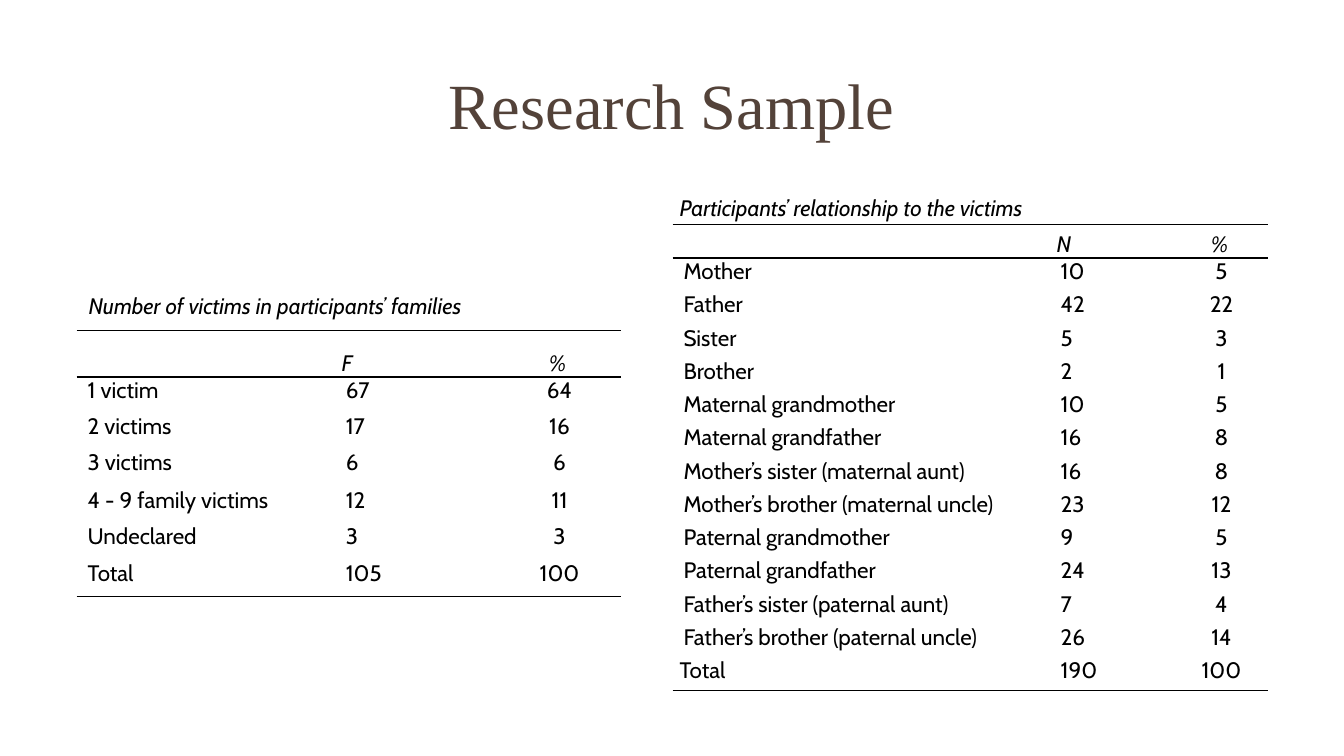
from lxml import etree
from pptx import Presentation
from pptx.dml.color import RGBColor
from pptx.enum.text import MSO_ANCHOR, PP_ALIGN
from pptx.oxml.ns import qn
from pptx.util import Inches, Pt

TITLE = "Research Sample"
RELATIONSHIP = {
    "pos": (6.67, 1.9),
    "cols": [3.74, 1.2, 0.97],
    "heights": [0.33] * 15,
    "caption": "Participants’ relationship to the victims",
    "caption_indent": 0,
    "total_indent": 0,
    "rows": [
        ("", "N", "%"),
        ("Mother", "10", "5"),
        ("Father", "42", "22"),
        ("Sister", "5", "3"),
        ("Brother", "2", "1"),
        ("Maternal grandmother", "10", "5"),
        ("Maternal grandfather", "16", "8"),
        ("Mother’s sister (maternal aunt)", "16", "8"),
        ("Mother’s brother (maternal uncle)", "23", "12"),
        ("Paternal grandmother", "9", "5"),
        ("Paternal grandfather", "24", "13"),
        ("Father’s sister (paternal aunt)", "7", "4"),
        ("Father’s brother (paternal uncle)", "26", "14"),
        ("Total", "190", "100"),
    ],
}
FAMILIES = {
    "pos": (0.76, 2.81),
    "cols": [2.56, 1.58, 1.26],
    "heights": [0.47, 0.46, 0.36, 0.36, 0.37, 0.36, 0.37, 0.36],
    "caption": "Number of victims in participants’ families",
    "caption_indent": 0.05,
    "total_indent": 0.04,
    "rows": [
        ("", "F", "%"),
        ("1 victim", "67", "64"),
        ("2 victims", "17", "16"),
        ("3 victims", "6", "6"),
        ("4 - 9 family victims", "12", "11"),
        ("Undeclared", "3", "3"),
        ("Total", "105", "100"),
    ],
}

WHITE = RGBColor(255, 255, 255)
BLACK = RGBColor(0, 0, 0)
BROWN = RGBColor(0x53, 0x42, 0x39)
LEFT, CENTER = PP_ALIGN.LEFT, PP_ALIGN.CENTER
TOP, MIDDLE, BOTTOM = MSO_ANCHOR.TOP, MSO_ANCHOR.MIDDLE, MSO_ANCHOR.BOTTOM
NO_STYLE = "{2D5ABB26-0587-4C30-8999-92F81FD0307C}"
INDENT = 0.04


def set_text(tf, text, font="Cabin", size=16, color=BLACK, italic=False,
             align=LEFT, indent=0):
    p = tf.paragraphs[0]
    p.alignment = align
    if indent:
        p._p.get_or_add_pPr().set("marL", str(Inches(indent)))
    if text:
        f = p.add_run().font
    else:
        f = p.font
    f.name, f.size, f.italic = font, Pt(size), italic
    f.color.rgb = color
    if text:
        p.runs[0].text = text


def set_borders(cell, top, bottom):
    tcPr = cell._tc.get_or_add_tcPr()
    sides = (("a:lnL", False), ("a:lnR", False), ("a:lnT", top), ("a:lnB", bottom))
    for i, (tag, visible) in enumerate(sides):
        ln = etree.Element(qn(tag), w=str(Pt(1)))
        if visible:
            fill = etree.SubElement(ln, qn("a:solidFill"))
            etree.SubElement(fill, qn("a:srgbClr"), val=str(BLACK))
        else:
            etree.SubElement(ln, qn("a:noFill"))
        tcPr.insert(i, ln)


def add_sample_table(slide, data):
    rows = [(data["caption"], "", "")] + data["rows"]
    cols, heights = data["cols"], data["heights"]
    x, y = data["pos"]
    frame = slide.shapes.add_table(len(rows), len(cols), Inches(x), Inches(y),
                                   Inches(sum(cols)), Inches(sum(heights)))
    table = frame.table
    table.first_row = table.horz_banding = False
    table._tbl.tblPr.find(qn("a:tableStyleId")).text = NO_STYLE
    for col, width in zip(table.columns, cols):
        col.width = Inches(width)
    for row, height in zip(table.rows, heights):
        row.height = Inches(height)
    table.cell(0, 0).merge(table.cell(0, len(cols) - 1))

    last = len(rows) - 1
    for r, values in enumerate(rows):
        for c, text in enumerate(values):
            cell = table.cell(r, c)
            cell.margin_left = cell.margin_right = Inches(0.07)
            cell.margin_top = cell.margin_bottom = 0
            cell.vertical_anchor = {0: MIDDLE, 1: BOTTOM}.get(r, TOP)
            cell.fill.solid()
            cell.fill.fore_color.rgb = WHITE
            set_borders(cell, top=r in (1, 2), bottom=r in (0, 1, last))
            if r == 0:
                indent = data["caption_indent"]
            elif r == 1:
                indent = 0
            elif r == last and c == 0:
                indent = data["total_indent"]
            else:
                indent = INDENT
            set_text(cell.text_frame, text, italic=r < 2, indent=indent,
                     align=CENTER if c == 2 else LEFT)


prs = Presentation()
prs.slide_width, prs.slide_height = Inches(13.33), Inches(7.5)
slide = prs.slides.add_slide(prs.slide_layouts[5])

title = slide.shapes.title
title.left, title.top = Inches(1.33), Inches(0.55)
title.width, title.height = Inches(10.66), Inches(0.95)
title.text_frame.vertical_anchor = MIDDLE
set_text(title.text_frame, TITLE, font="Times New Roman", size=46, color=BROWN,
         align=CENTER)

for data in (RELATIONSHIP, FAMILIES):
    add_sample_table(slide, data)

prs.save("out.pptx")
